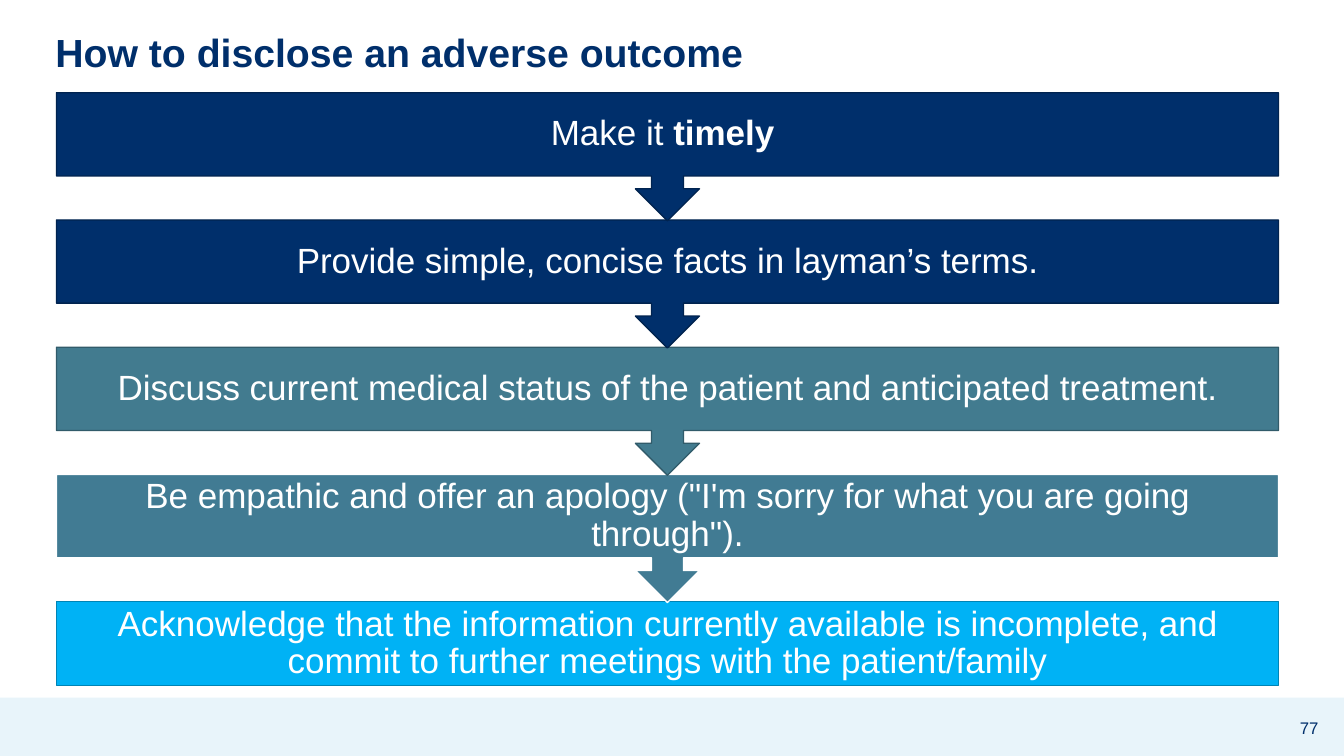
from pptx import Presentation
from pptx.dml.color import RGBColor
from pptx.enum.shapes import MSO_SHAPE
from pptx.enum.text import MSO_ANCHOR, PP_ALIGN
from pptx.util import Inches, Pt

HUES = {"navy": "002F6B", "deep": "00234F", "teal": "427B8F", "slate": "315B6A",
        "blue": "417B93", "sky": "00B2F5", "edge": "0084B5", "pale": "E8F4FA",
        "white": "FFFFFF"}

# Grid: one column, five rows of equal pitch
LEFT, TOP, WIDE = 0.56, 0.92, 12.12
PITCH, BOX, CALL = 1.2625, 0.83, 1.27

# Each step: fill, line, runs of (text, bold)
STEPS = [
    ("navy", "deep", [("Make it ", False), ("timely ", True)]),
    ("navy", "deep", [("Provide simple, concise facts in layman’s terms.", False)]),
    ("teal", "slate", [("Discuss current medical status of the patient and "
                        "anticipated treatment.", False)]),
    ("blue", "white", [("Be empathic and offer an apology (\"I'm sorry for what "
                        "you are going through\").", False)]),
    ("sky", "edge", [("Acknowledge that the information currently available is "
                      "incomplete, and commit to further meetings with the "
                      "patient/family", False)]),
]


def block(kind, x, y, w, h, fill, line=None):
    shape = slide.shapes.add_shape(kind, Inches(x), Inches(y), Inches(w), Inches(h))
    shape.shadow.inherit = False
    shape.fill.solid()
    shape.fill.fore_color.rgb = RGBColor.from_string(HUES[fill])
    if line:
        shape.line.color.rgb = RGBColor.from_string(HUES[line])
        shape.line.width = Pt(1)
    else:
        shape.line.fill.background()
    return shape


def write(shape, runs, size, hue, align, inset, space=1.0):
    frame = shape.text_frame
    form = {"word_wrap": True, "vertical_anchor": MSO_ANCHOR.MIDDLE}
    for side in ("left", "right", "top", "bottom"):
        form["margin_" + side] = Inches(inset if side in ("left", "right")
                                        or inset > 0.1 else 0.05)
    for key, val in form.items():
        setattr(frame, key, val)
    para = frame.paragraphs[0]
    para.alignment, para.line_spacing = align, space
    for text, bold in runs:
        run = para.add_run()
        run.text = text
        for key, val in {"name": "Arial", "size": Pt(size), "bold": bold}.items():
            setattr(run.font, key, val)
        run.font.color.rgb = RGBColor.from_string(HUES[hue])


deck = Presentation()
deck.slide_width, deck.slide_height = Inches(13.33), Inches(7.5)
slide = deck.slides.add_slide(deck.slide_layouts[5])

# Footer band
block(MSO_SHAPE.RECTANGLE, 0, 6.92, 13.33, 0.58, "pale")

# Title
title = slide.shapes.title
place = {"left": 0.45, "top": 0.15, "width": 12.09, "height": 0.78}
for key, val in place.items():
    setattr(title, key, Inches(val))
write(title, [("How to disclose an adverse outcome", True)], 28, "navy",
      PP_ALIGN.LEFT, 0.1, 0.9)

# Page number
page = slide.shapes.add_textbox(Inches(12.68), Inches(7.02), Inches(0.61), Inches(0.4))
write(page, [("77", False)], 12, "navy", PP_ALIGN.CENTER, 0.1)

# Steps, last first so that each arrow tip lies over the next box
for row, (fill, line, runs) in reversed(list(enumerate(STEPS))):
    y = TOP + row * PITCH
    if row == len(STEPS) - 1:
        block(MSO_SHAPE.RECTANGLE, LEFT, y, WIDE, BOX, fill, line)
    else:
        call = block(MSO_SHAPE.UP_ARROW_CALLOUT, LEFT, y, WIDE, CALL, fill, line)
        call.rotation = 180
    label = slide.shapes.add_textbox(Inches(LEFT), Inches(y), Inches(WIDE), Inches(BOX))
    write(label, runs, 25, "white", PP_ALIGN.CENTER, 0.19, 0.9)

deck.save("out.pptx")
